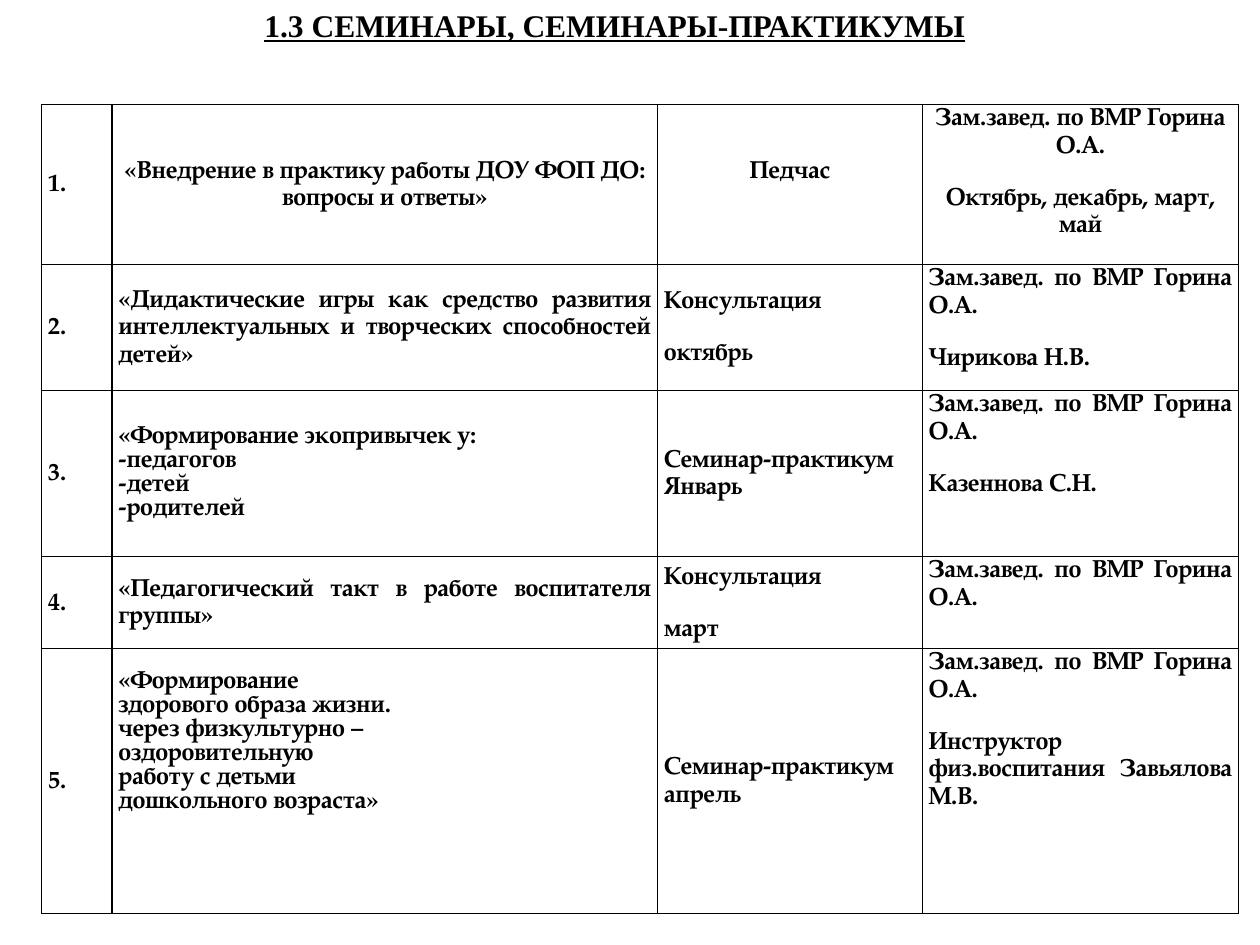
from lxml.etree import SubElement as Sub
from pptx import Presentation as Deck
from pptx.dml.color import RGBColor as Rgb
from pptx.enum.text import MSO_ANCHOR as Anchor, PP_ALIGN as Align
from pptx.oxml.ns import qn
from pptx.util import Inches, Pt

INK = "000000"
HEAD = dict(name="Times New Roman", size=Pt(18), bold=True, underline=True)
BODY = dict(name="TeX Gyre Pagella", size=Pt(14), bold=True)
COLS = 0.56, 4.33, 2.1, 2.51
HIGH = 1.26, 1, 1.32, 0.73, 2.1
CHIEF = "Зам.завед. по ВМР Горина О.А."
ROWS = [
    ["1.", "«Внедрение в практику работы ДОУ ФОП ДО: вопросы и ответы»",
     "Педчас", f"{CHIEF}\nОктябрь, декабрь, март, май"],
    ["2.", "«Дидактические игры как средство развития интеллектуальных"
     " и творческих способностей детей»",
     "Консультация\nоктябрь", f"{CHIEF}\nЧирикова Н.В."],
    ["3.", "«Формирование экопривычек у:\n-педагогов\n-детей\n-родителей",
     "Семинар-практикум Январь", f"{CHIEF}\nКазеннова С.Н."],
    ["4.", "«Педагогический такт в работе воспитателя группы»",
     "Консультация\nмарт", CHIEF],
    ["5.", "«Формирование\nздорового образа жизни.\nчерез физкультурно –\n"
     "оздоровительную\nработу с детьми\nдошкольного возраста»",
     "Семинар-практикум апрель",
     f"{CHIEF}\nИнструктор физ.воспитания Завьялова М.В."],
]
LIFT = {(0, 2): 0.22, (4, 1): 0.6}


def paint(item, tint):
    """Apply a hex colour to a font or fill."""
    item.rgb = Rgb.from_string(tint)


def style(item, form):
    """Set each attribute in the dict."""
    for key, value in form.items():
        setattr(item, key, value)


def write(frame, text, form, para):
    """Fill a text frame, one paragraph per line of text."""
    frame.text = text
    for i, par in enumerate(frame.paragraphs):
        style(par, para)
        if i == 0:
            par.space_before = Pt(0)
        style(par.runs[0].font, form)
        paint(par.runs[0].font.color, INK)


def edge(cell, tint, width):
    """Draw the four borders of a cell."""
    props = cell._tc.get_or_add_tcPr()
    for n, side in enumerate(("lnL", "lnR", "lnT", "lnB")):
        line = props.makeelement(qn(f"a:{side}"), {"w": str(Pt(width))})
        fill = Sub(line, qn("a:solidFill"))
        Sub(fill, qn("a:srgbClr"), val=tint)
        props.insert(n, line)


def title(slide, box):
    """Place the heading in the box."""
    frame = slide.shapes.add_textbox(*map(Inches, box)).text_frame
    frame.word_wrap = True
    write(frame, "1.3 СЕМИНАРЫ, СЕМИНАРЫ-ПРАКТИКУМЫ", HEAD,
          dict(alignment=Align.CENTER))


def plan(slide, box):
    """Place the seminar table in the box."""
    grid = slide.shapes.add_table(len(ROWS), len(COLS), *map(Inches, box)).table
    style(grid, dict(first_row=False, horz_banding=False))
    for col, wide in zip(grid.columns, COLS):
        col.width = Inches(wide)
    for r, (row, high) in enumerate(zip(grid.rows, HIGH)):
        row.height = Inches(high)
        for c, text in enumerate(ROWS[r]):
            cell = row.cells[c]
            style(cell, dict(
                margin_left=Inches(0.05), margin_right=Inches(0.05),
                margin_top=0, margin_bottom=Inches(LIFT.get((r, c), 0)),
                vertical_anchor=Anchor.TOP if c == 3 else Anchor.MIDDLE))
            cell.fill.background()
            edge(cell, INK, 1)
            para = dict(alignment=Align.CENTER if r == 0 and c else Align.JUSTIFY)
            if text.count("\n") < 2:
                para.update(line_spacing=1.15, space_before=Pt(14))
            write(cell.text_frame, text, BODY, para)


def main():
    """Build and save the slide."""
    deck = Deck()
    style(deck, dict(slide_width=Inches(10), slide_height=Inches(7.5)))
    slide = deck.slides.add_slide(deck.slide_layouts[6])
    title(slide, (0.17, 0, 9.42, 1.01))
    plan(slide, (0.33, 0.83, sum(COLS), sum(HIGH)))
    deck.save("out.pptx")


if __name__ == "__main__":
    main()
